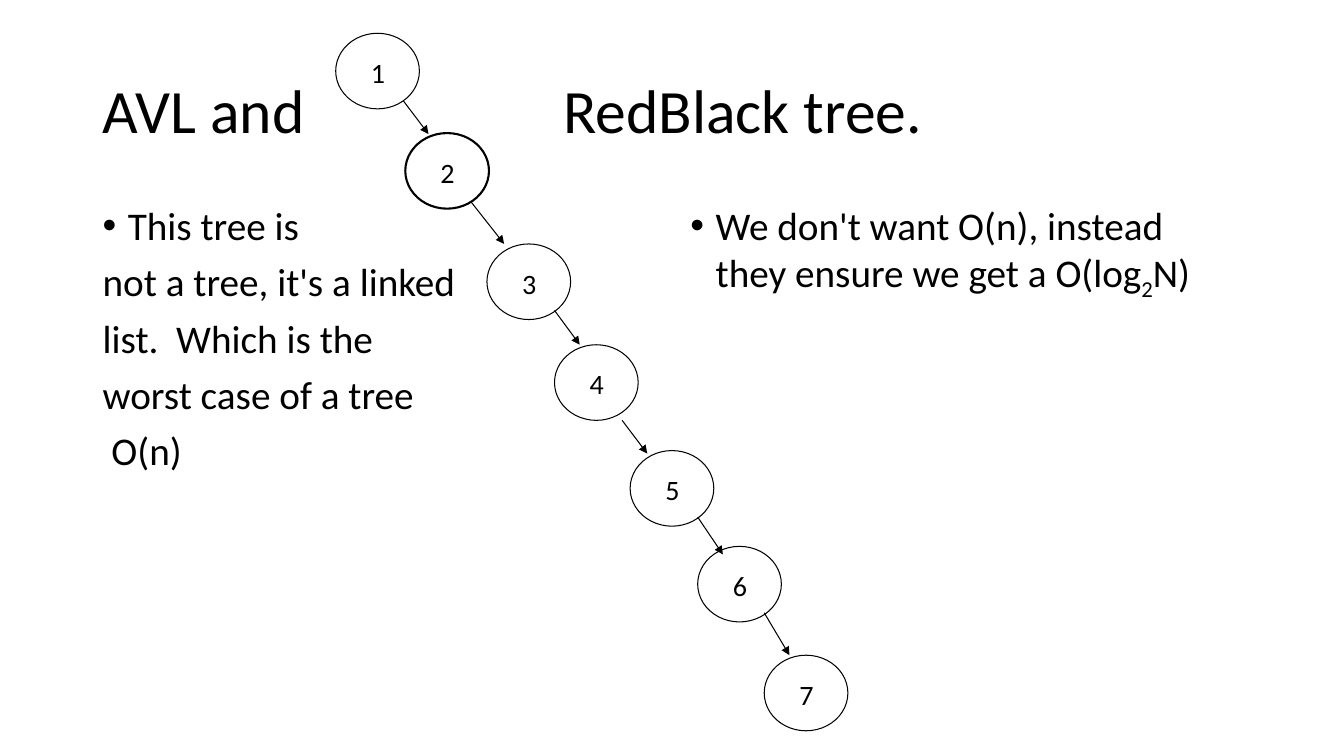
from lxml import etree
from pptx import Presentation
from pptx.dml.color import RGBColor
from pptx.enum.shapes import MSO_CONNECTOR, MSO_SHAPE
from pptx.enum.text import MSO_ANCHOR, MSO_AUTO_SIZE
from pptx.oxml.ns import qn
from pptx.util import Inches, Pt

ELLIPSE = MSO_SHAPE.OVAL
STRAIGHT = MSO_CONNECTOR.STRAIGHT
TOP, MIDDLE = MSO_ANCHOR.TOP, MSO_ANCHOR.MIDDLE
GROW = MSO_AUTO_SIZE.SHAPE_TO_FIT_TEXT

FONT = "Calibri"
BLACK = "000000"
NODE_WIDTH, NODE_HEIGHT = 0.83, 0.75
LABEL_DX, LABEL_DY = 0.25, 0.17

# Left, top and outline weight of each node, numbered from 1
NODES = [
    (3.33, 0.33, 0.75), (4.02, 1.32, 1.5), (4.83, 2.42, 0.75),
    (5.5, 3.42, 0.75), (6.25, 4.47, 0.75), (6.92, 5.42, 0.75),
    (7.58, 6.5, 0.75),
]
# Start and end of the arrow from each node to its only child
CHILD_ARROWS = [
    ((4, 1), (4.25, 1.33)), ((4.67, 2), (5, 2.42)),
    ((5.5, 3.08), (5.75, 3.42)), ((6.17, 4.17), (6.42, 4.5)),
    ((6.92, 5.13), (7.17, 5.5)), ((7.58, 6.08), (7.83, 6.5)),
]
WORST_CASE = [
    "This tree is", "not a tree, it's a linked", "list.  Which is the",
    "worst case of a tree", " O(n)",
]
BALANCED = [("We don't want O(n), instead they ensure we get a O(log", 0),
            ("2", -25), ("N)", 0)]


def color(hex_string):
    return RGBColor.from_string(hex_string)


def add_text(frame, runs, size, first=True, line_spacing=None, before=None,
             bullet=False, tab=None):
    """Write one paragraph; runs is a string or (text, baseline %) pairs."""
    paragraph = frame.paragraphs[0] if first else frame.add_paragraph()
    if line_spacing:
        paragraph.line_spacing = line_spacing
    if before:
        paragraph.space_before = Pt(before)
    properties = paragraph._p.get_or_add_pPr()
    if bullet:
        properties.set("marL", str(Inches(0.25)))
        properties.set("indent", str(Inches(-0.25)))
        etree.SubElement(properties, qn("a:buFont"), typeface="Arial")
        etree.SubElement(properties, qn("a:buChar"), char="•")
    if tab:
        tabs = etree.SubElement(properties, qn("a:tabLst"))
        etree.SubElement(tabs, qn("a:tab"), pos=str(Inches(tab)), algn="l")
    for text, baseline in [(runs, 0)] if isinstance(runs, str) else runs:
        run = paragraph.add_run()
        run.text = text
        run.font.name = FONT
        run.font.size = Pt(size)
        run.font.color.rgb = color(BLACK)
        if baseline:
            run._r.get_or_add_rPr().set("baseline", str(baseline * 1000))


def add_frame(slide, left, top, width, height, anchor=TOP, wrap=True):
    box = slide.shapes.add_textbox(
        Inches(left), Inches(top), Inches(width), Inches(height))
    frame = box.text_frame
    frame.word_wrap = wrap
    frame.vertical_anchor = anchor
    return frame


def add_node(slide, number, left, top, weight):
    node = slide.shapes.add_shape(
        ELLIPSE, Inches(left), Inches(top),
        Inches(NODE_WIDTH), Inches(NODE_HEIGHT))
    node.shadow.inherit = False
    node.fill.background()
    node.line.color.rgb = color(BLACK)
    node.line.width = Pt(weight)
    label = add_frame(slide, left + LABEL_DX, top + LABEL_DY, 0.34, 0.44,
                      wrap=False)
    label.auto_size = GROW
    add_text(label, str(number), 20)


def add_arrow(slide, start, end):
    arrow = slide.shapes.add_connector(
        STRAIGHT, *(Inches(value) for value in start + end))
    arrow.line.color.rgb = color(BLACK)
    arrow.line.width = Pt(0.75)
    etree.SubElement(arrow.line._get_or_add_ln(), qn("a:tailEnd"),
                     type="triangle")
    etree.SubElement(arrow._element.spPr, qn("a:effectLst"))


def main():
    deck = Presentation()
    deck.slide_width, deck.slide_height = Inches(13.33), Inches(7.5)
    slide = deck.slides.add_slide(deck.slide_layouts[6])

    # Title, with a tab that leaves room for the tree
    title = add_frame(slide, 0.92, 0.4, 11.5, 1.45, anchor=MIDDLE)
    add_text(title, "AVL and\tRedBlack tree.", 44, line_spacing=0.9, tab=4.57)

    # Worst case on the left, balanced trees on the right
    worst_case = add_frame(slide, 0.92, 2, 5.67, 4.76)
    for index, line in enumerate(WORST_CASE):
        add_text(worst_case, line, 28, first=index == 0, line_spacing=0.9,
                 before=10, bullet=index == 0)
    balanced = add_frame(slide, 6.75, 2, 5.67, 4.76)
    add_text(balanced, BALANCED, 28, line_spacing=0.9, before=10, bullet=True)

    # Degenerate tree
    for number, (left, top, weight) in enumerate(NODES, start=1):
        add_node(slide, number, left, top, weight)
    for start, end in CHILD_ARROWS:
        add_arrow(slide, start, end)

    deck.save("out.pptx")


if __name__ == "__main__":
    main()
